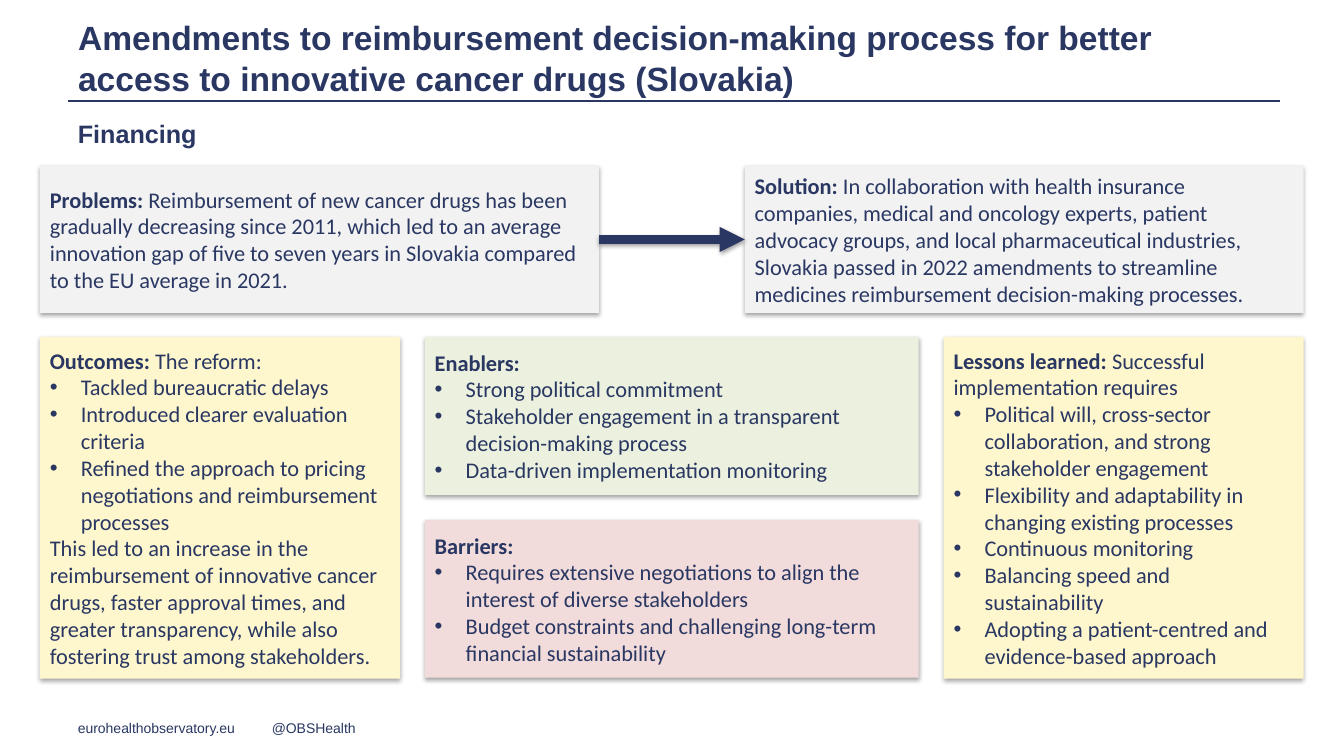
"""Build the slide on reimbursement of innovative cancer drugs in Slovakia."""
from lxml import etree
from pptx import Presentation
from pptx import util as u
from pptx.dml.color import RGBColor
from pptx.enum import shapes, text
from pptx.oxml import ns

TITLE = ("Amendments to reimbursement decision-making process for better "
         "access to innovative cancer drugs (Slovakia)")
SUBTITLE = "Financing"
FOOTERS = [(68, 214, "eurohealthobservatory.eu"), (262, 149, "@OBSHealth")]

PROBLEMS = ("Problems:", "Reimbursement of new cancer drugs has been gradually decreasing since 2011, "
            "which led to an average innovation gap of five to seven years in Slovakia "
            "compared to the EU average in 2021.", [], "")
SOLUTION = ("Solution:", "In collaboration with health insurance companies, medical and oncology experts, "
            "patient advocacy groups, and local pharmaceutical industries, Slovakia passed in 2022 "
            "amendments to streamline medicines reimbursement decision-making processes.", [], "")
OUTCOMES = ("Outcomes:", "The reform:", [
    "Tackled bureaucratic delays",
    "Introduced clearer evaluation criteria",
    "Refined the approach to pricing negotiations and reimbursement processes",
], "This led to an increase in the reimbursement of innovative cancer drugs, faster approval times, "
   "and greater transparency, while also fostering trust among stakeholders.")
LESSONS = ("Lessons learned:", "Successful implementation requires", [
    "Political will, cross-sector collaboration, and strong stakeholder engagement",
    "Flexibility and adaptability in changing existing processes",
    "Continuous monitoring",
    "Balancing speed and sustainability",
    "Adopting a patient-centred and evidence-based approach",
], "")
ENABLERS = ("Enablers:", "", [
    "Strong political commitment",
    "Stakeholder engagement in a transparent decision-making process",
    "Data-driven implementation monitoring",
], "")
BARRIERS = ("Barriers:", "", [
    "Requires extensive negotiations to align the interest of diverse stakeholders",
    "Budget constraints and challenging long-term financial sustainability",
], "")

NAVY, GREY, YELLOW, GREEN, PINK = "293762", "F2F2F2", "FEF7CD", "EBF1DE", "F2DCDB"
PX = 9080
LEFT, RIGHT, GAP = 40, 1304, 25
TOP, TOP_W, TOP_H = 166, 559, 147
LOW, SIDE_W, SIDE_H, MID_H = 337, 360, 342, 158
HEAD_X, HEAD_W, RULE_Y = 68, 1212, 101
INDENT = 31
MIDDLE = text.MSO_ANCHOR.MIDDLE


def px(*lengths):
    return [u.Emu(n * PX) for n in lengths]


def color(value):
    return RGBColor.from_string(value)


def child(parent, tag, **attrs):
    return etree.SubElement(parent, ns.qn(tag), {k: str(v) for k, v in attrs.items()})


def set_all(obj, values):
    for name, value in values.items():
        setattr(obj, name, value)


def set_font(font, name, size, bold=False):
    set_all(font, {"name": name, "size": u.Pt(size), "bold": bold})
    font.color.rgb = color(NAVY)


def add_shadow(sp, dist, alpha):
    props = sp._element.spPr
    for old in props.findall(ns.qn("a:effectLst")):
        props.remove(old)
    effects = child(props, "a:effectLst")
    outer = child(effects, "a:outerShdw", blurRad=40000, dist=dist, dir=5400000, rotWithShape=0)
    child(child(outer, "a:srgbClr", val="000000"), "a:alpha", val=alpha * 1000)


def set_frame(tf, anchor):
    set_all(tf, {"word_wrap": True, "auto_size": text.MSO_AUTO_SIZE.NONE, "vertical_anchor": anchor})


def write_line(sp, words, size, bold=False, anchor=text.MSO_ANCHOR.TOP):
    tf = sp.text_frame
    set_frame(tf, anchor)
    p = tf.paragraphs[0]
    p.alignment = text.PP_ALIGN.LEFT
    r = p.add_run()
    r.text = words
    set_font(r.font, "Arial", size, bold)


def add_card(slide, box, fill, content):
    label, lead, bullets, closing = content
    sp = slide.shapes.add_shape(shapes.MSO_SHAPE.RECTANGLE, *px(*box))
    sp.fill.solid()
    sp.fill.fore_color.rgb = color(fill)
    sp.line.fill.background()
    add_shadow(sp, 23000, 35)
    tf = sp.text_frame
    set_frame(tf, MIDDLE)
    first = [(label + " ", True), (lead, False)] if lead else [(label, True)]
    rows = [(False, first)] + [(True, [(b, False)]) for b in bullets]
    if closing:
        rows.append((False, [(closing, False)]))
    for i, (bulleted, runs) in enumerate(rows):
        p = tf.add_paragraph() if i else tf.paragraphs[0]
        p.alignment = text.PP_ALIGN.LEFT
        if bulleted:
            pr = p._p.get_or_add_pPr()
            pr.set("marL", str(INDENT * PX))
            pr.set("indent", str(-INDENT * PX))
            child(pr, "a:buFont", typeface="Arial")
            child(pr, "a:buChar", char="•")
        for words, bold in runs:
            r = p.add_run()
            r.text = words
            set_font(r.font, "Calibri", 16, bold)
    return sp


def add_line(slide, ends, width):
    ln = slide.shapes.add_connector(shapes.MSO_CONNECTOR.STRAIGHT, *px(*ends))
    ln.line.color.rgb = color(NAVY)
    ln.line.width = u.Pt(width)
    child(ln._element.spPr, "a:effectLst")
    return ln


def main():
    prs = Presentation()
    set_all(prs, {"slide_width": u.Inches(13.35), "slide_height": u.Inches(7.5)})
    slide = prs.slides.add_slide(prs.slide_layouts[5])

    title = slide.shapes.title
    set_all(title, dict(zip(("left", "top", "width", "height"), px(HEAD_X, 34, HEAD_W, 47))))
    write_line(title, TITLE, 24, True, MIDDLE)
    write_line(slide.shapes.add_textbox(*px(HEAD_X, 113, HEAD_W, 53)), SUBTITLE, 18, True)
    for x, w, words in FOOTERS:
        write_line(slide.shapes.add_textbox(*px(x, 715, w, 27)), words, 10)
    add_line(slide, (HEAD_X, RULE_Y, HEAD_X + HEAD_W, RULE_Y), 2)

    solution_x, lessons_x = RIGHT - TOP_W, RIGHT - SIDE_W
    mid_x = LEFT + SIDE_W + GAP
    mid_w = lessons_x - GAP - mid_x
    cards = [
        ((LEFT, TOP, TOP_W, TOP_H), GREY, PROBLEMS),
        ((solution_x, TOP, TOP_W, TOP_H), GREY, SOLUTION),
        ((LEFT, LOW, SIDE_W, SIDE_H), YELLOW, OUTCOMES),
        ((lessons_x, LOW, SIDE_W, SIDE_H), YELLOW, LESSONS),
        ((mid_x, LOW, mid_w, MID_H), GREEN, ENABLERS),
        ((mid_x, LOW + MID_H + GAP, mid_w, MID_H), PINK, BARRIERS),
    ]
    problems, solution, *_ = [add_card(slide, *card) for card in cards]

    arrow_y = TOP + TOP_H // 2
    arrow = add_line(slide, (LEFT + TOP_W, arrow_y, solution_x, arrow_y), 6)
    arrow.begin_connect(problems, 3)
    arrow.end_connect(solution, 1)
    child(arrow.get_or_add_ln(), "a:tailEnd", type="triangle")
    add_shadow(arrow, 20000, 38)
    prs.save("out.pptx")


if __name__ == "__main__":
    main()
